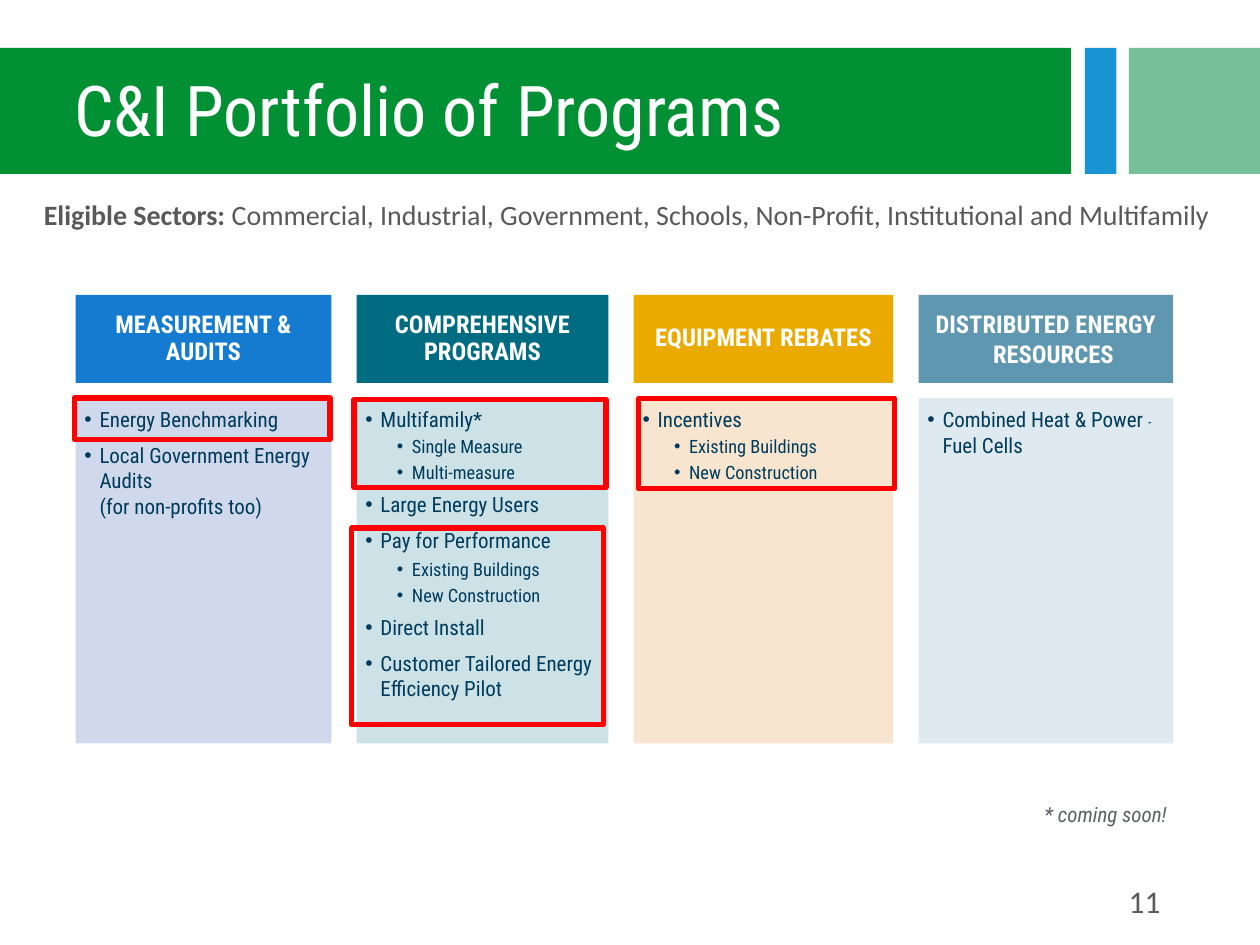
from dataclasses import dataclass

from lxml.etree import SubElement
from pptx import Presentation
from pptx.dml.color import RGBColor
from pptx.enum.shapes import MSO_SHAPE
from pptx.enum.text import MSO_ANCHOR, PP_ALIGN
from pptx.oxml.ns import qn
from pptx.util import Inches, Pt

COLORS = {
    "green": "029035", "blue": "1894D2", "mint": "77C19A",
    "white": "FFFFFF", "gray": "595959", "note": "5E6167",
    "navy": "003B5C", "red": "FF0000",
    "audit": "147BD1", "audit_bg": "D0D8EB",
    "comp": "006C82", "comp_bg": "CCE2E6",
    "rebate": "EAAA00", "rebate_bg": "F8E5D0",
    "energy": "5E97AF",
}
ROBOTO, CALIBRI = "Roboto Condensed", "Calibri"


@dataclass
class Box:
    left: float
    top: float
    width: float
    height: float

    def args(self) -> list:
        return [Inches(v) for v in (self.left, self.top, self.width, self.height)]


@dataclass
class Item:
    text: str
    level: int = 1
    before: float = 3
    after: float = 3


@dataclass
class Column:
    left: float
    width: float
    head: str
    color: str
    back: str
    items: list
    alpha: int = 100
    hang: float = 0


def sub(text: str) -> Item:
    return Item(text, 2, 0, 2)


def lead(text: str) -> Item:
    return Item(text, 1, 0, 2)


def rgb(name: str) -> RGBColor:
    return RGBColor.from_string(COLORS[name])


def style(para, size: float, color: str, face: str = ROBOTO, bold=None, italic=None) -> None:
    font = para.font
    font.size, font.name, font.bold, font.italic = Pt(size), face, bold, italic
    font.color.rgb = rgb(color)


def indent(para, left: float, first: float = 0, bullet: bool = False) -> None:
    props = para._p.get_or_add_pPr()
    props.set("marL", str(Inches(left)))
    props.set("indent", str(Inches(first)))
    if bullet:
        SubElement(props, qn("a:buFont"), typeface="Arial")
        SubElement(props, qn("a:buChar"), char="•")


def inset(frame, left: float, top: float, right: float, bottom: float) -> None:
    frame.margin_left, frame.margin_top = Inches(left), Inches(top)
    frame.margin_right, frame.margin_bottom = Inches(right), Inches(bottom)


def add_rect(slide, box: Box, color: str, alpha: int = 100):
    shape = slide.shapes.add_shape(MSO_SHAPE.RECTANGLE, *box.args())
    shape.shadow.inherit = False
    shape.fill.solid()
    shape.fill.fore_color.rgb = rgb(color)
    shape.line.fill.background()
    if alpha < 100:
        tint = shape._element.spPr.find(".//" + qn("a:srgbClr"))
        SubElement(tint, qn("a:alpha"), val=str(alpha * 1000))
    return shape


def add_frame(slide, box: Box) -> None:
    shape = add_rect(slide, box, "red")
    shape.fill.background()
    shape.line.color.rgb = rgb("red")
    shape.line.width = Pt(3)


def add_text(slide, box: Box, align):
    frame = slide.shapes.add_textbox(*box.args()).text_frame
    frame.word_wrap = True
    para = frame.paragraphs[0]
    para.alignment = align
    return para


def add_head(slide, col: Column) -> None:
    box = Box(col.left, 2.34, col.width, 0.7)
    frame = add_rect(slide, box, col.color).text_frame
    frame.word_wrap = True
    frame.vertical_anchor = MSO_ANCHOR.MIDDLE
    inset(frame, 0.1, 0.06, 0.1, 0.06)
    para = frame.paragraphs[0]
    para.text = col.head
    para.alignment = PP_ALIGN.CENTER
    if col.hang:
        indent(para, col.hang, -col.hang)
    else:
        para.line_spacing = 0.9
    style(para, 14, "white", bold=True)


def add_list(slide, col: Column) -> None:
    box = Box(col.left, 3.16, col.width, 2.74)
    frame = add_rect(slide, box, col.back, col.alpha).text_frame
    frame.word_wrap = True
    frame.vertical_anchor = MSO_ANCHOR.TOP
    inset(frame, 0.07, 0.07, 0.09, 0.1)
    for i, item in enumerate(col.items):
        para = frame.add_paragraph() if i else frame.paragraphs[0]
        # A bar marks a short run in smaller type
        for j, part in enumerate(item.text.split("|")):
            for k, line in enumerate(part.split("\n")):
                if k:
                    para.add_line_break()
                run = para.add_run()
                run.text = line
                if j == 1:
                    run.font.size = Pt(8)
        para.alignment = PP_ALIGN.LEFT
        para.level = item.level
        para.space_before = Pt(item.before if i else 0)
        para.space_after = Pt(item.after)
        indent(para, 0.12 if item.level == 1 else 0.37, -0.12, True)
        style(para, 12 if item.level == 1 else 10.5, "navy")


COLUMNS = [
    Column(0.6, 2.03, "MEASUREMENT & AUDITS", "audit", "audit_bg", [
        Item("Energy Benchmarking"),
        Item("Local Government Energy Audits\n(for non-profits too)")]),
    Column(2.83, 2, "COMPREHENSIVE PROGRAMS", "comp", "comp_bg", [
        lead("Multifamily*"), sub("Single Measure"), sub("Multi-measure"),
        Item("Large Energy Users"), Item("Pay for Performance"),
        sub("Existing Buildings"), sub("New Construction"),
        Item("Direct Install"),
        Item("Customer Tailored Energy Efficiency Pilot")]),
    Column(5.03, 2.06, "EQUIPMENT REBATES", "rebate", "rebate_bg", [
        lead("Incentives"), sub("Existing Buildings"), sub("New Construction")]),
    Column(7.29, 2.02, "DISTRIBUTED ENERGY RESOURCES", "energy", "energy", [
        Item("Combined Heat & Power |- |Fuel Cells")], alpha=20, hang=0.12),
]
FRAMES = [Box(0.59, 3.16, 2.03, 0.33), Box(2.81, 3.17, 2, 0.7),
          Box(2.79, 4.19, 2, 1.56), Box(5.07, 3.16, 2.03, 0.72)]


def main() -> None:
    deck = Presentation()
    deck.slide_width, deck.slide_height = Inches(10), Inches(7.5)
    slide = deck.slides.add_slide(deck.slide_layouts[5])

    # Title band
    add_rect(slide, Box(8.61, 0.38, 0.25, 1), "blue")
    add_rect(slide, Box(8.96, 0.38, 1.04, 1), "mint")
    add_rect(slide, Box(-0.01, 0.38, 8.51, 1), "green")
    title = slide.shapes.title
    title.left, title.top, title.width, title.height = Box(-0.01, 0.4, 8.51, 1).args()
    title.text_frame.vertical_anchor = MSO_ANCHOR.MIDDLE
    para = title.text_frame.paragraphs[0]
    para.text = "C&I Portfolio of Programs"
    para.alignment = PP_ALIGN.LEFT
    para.line_spacing = 0.9
    indent(para, 0.5)
    style(para, 40, "white")
    slide.shapes._spTree.append(title._element)  # in front of the band

    # Sectors line
    para = add_text(slide, Box(-0.01, 1.52, 9.97, 0.37), PP_ALIGN.CENTER)
    label = para.add_run()
    label.text = "Eligible Sectors: "
    label.font.bold = True
    para.add_run().text = ("Commercial, Industrial, Government, Schools, "
                           "Non-Profit, Institutional and Multifamily")
    style(para, 16, "gray", CALIBRI)

    # Program columns and highlights
    for col in COLUMNS:
        add_list(slide, col)
        add_head(slide, col)
    for box in FRAMES:
        add_frame(slide, box)

    # Footnote and page number
    para = add_text(slide, Box(6.23, 6.31, 3.13, 0.3), PP_ALIGN.RIGHT)
    para.text = "* coming soon!"
    style(para, 12, "note", italic=True)
    para = add_text(slide, Box(7.06, 6.95, 2.25, 0.4), PP_ALIGN.RIGHT)
    para.text = "11"
    style(para, 18, "gray", CALIBRI)

    deck.save("out.pptx")


if __name__ == "__main__":
    main()
